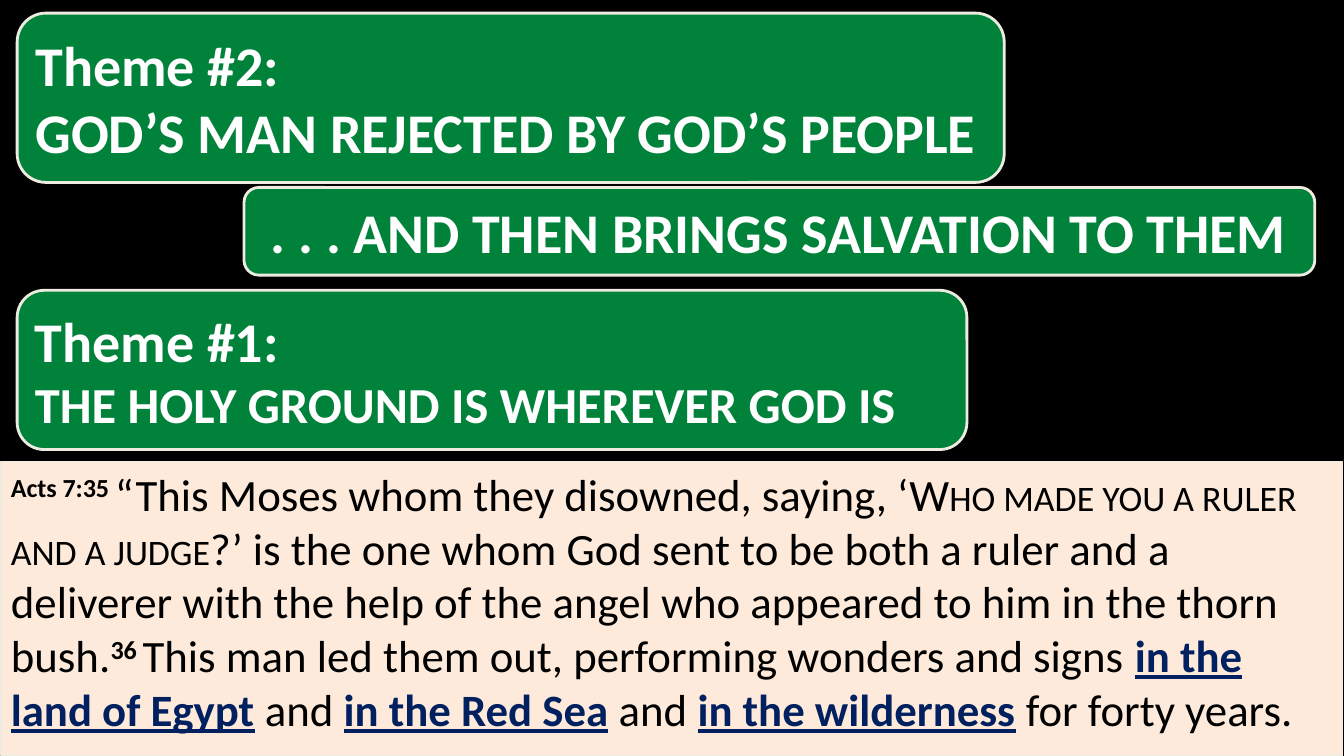
import pptx
import pptx.util
import pptx.dml.color
import pptx.enum.shapes
import pptx.enum.text

RGBColor = pptx.dml.color.RGBColor
BLACK = RGBColor(0x00, 0x00, 0x00)
WHITE = RGBColor(0xFF, 0xFF, 0xFF)
GREEN = RGBColor(0x00, 0x82, 0x3B)
PEACH = RGBColor(0xFD, 0xEA, 0xDA)
CREAM = RGBColor(0xEE, 0xEC, 0xE1)
NAVY = RGBColor(0x00, 0x20, 0x60)
SHAPES = pptx.enum.shapes.MSO_SHAPE
ANCHORS = pptx.enum.text.MSO_ANCHOR

presentation = pptx.Presentation()
presentation.slide_width = pptx.util.Inches(13.33)
presentation.slide_height = pptx.util.Inches(7.5)
slide = presentation.slides.add_slide(presentation.slide_layouts[6])
slide.background.fill.solid()
slide.background.fill.fore_color.rgb = BLACK


def add_panel(kind, box, fill, line_width, anchor):
    shape = slide.shapes.add_shape(kind, *(pptx.util.Inches(length) for length in box))
    shape.shadow.inherit = False
    shape.fill.solid()
    shape.fill.fore_color.rgb = fill
    shape.line.color.rgb = CREAM
    shape.line.width = pptx.util.Pt(line_width)
    shape.text_frame.word_wrap = True
    shape.text_frame.vertical_anchor = anchor
    return shape


def add_run(paragraph, text, size, color, bold):
    paragraph.alignment = pptx.enum.text.PP_ALIGN.LEFT
    run = paragraph.add_run()
    run.text = text
    run.font.name = "Calibri"
    run.font.size = pptx.util.Pt(size)
    run.font.color.rgb = color
    run.font.bold = bold
    return run


# Scripture passage: each run has a style of its own
passage = [
    ("Acts 7:35 ", "verse"),
    ("“This Moses whom they disowned, saying, ‘", "plain"),
    ("Who made you a ruler and a judge", "small caps"),
    ("?’ is the one whom God sent to be both a ruler and a deliverer with the help "
     "of the angel who appeared to him in the thorn bush.", "plain"),
    ("36 ", "verse"),
    ("This man led them out, performing wonders and signs ", "plain"),
    ("in the land of Egypt", "place"),
    (" and ", "plain"),
    ("in the Red Sea", "place"),
    (" and ", "plain"),
    ("in the wilderness", "place"),
    (" for forty years. ", "plain"),
]
scripture = add_panel(SHAPES.RECTANGLE, (0.01, 4.58, 13.31, 2.92), PEACH, 0.75, ANCHORS.TOP)
paragraph = scripture.text_frame.paragraphs[0]
for text, style in passage:
    color = NAVY if style == "place" else BLACK
    run = add_run(paragraph, text, 32, color, style in ("verse", "place"))
    if style == "place":
        run.font.underline = True
    elif style == "verse":
        run.font._element.set("baseline", "30000")
    elif style == "small caps":
        run.font._element.set("cap", "small")

# Theme callouts: box, then lines of text with their sizes
callouts = [
    ((0.17, 0.13, 9.79, 1.68),
     [("Theme #2:", 40), ("GOD’S MAN REJECTED BY GOD’S PEOPLE", 40)]),
    ((2.42, 1.86, 10.62, 0.87),
     [(" . . . AND THEN BRINGS SALVATION TO THEM", 40)]),
    ((0.17, 2.88, 9.42, 1.58),
     [("Theme #1:", 40), ("THE HOLY GROUND IS WHEREVER GOD IS", 36)]),
]
for box, lines in callouts:
    callout = add_panel(SHAPES.ROUNDED_RECTANGULAR_CALLOUT, box, GREEN, 2, ANCHORS.MIDDLE)
    for index, adjustment in enumerate((-0.22, 0.5, 0.17)):
        callout.adjustments[index] = adjustment
    frame = callout.text_frame
    for index, (text, size) in enumerate(lines):
        paragraph = frame.add_paragraph() if index else frame.paragraphs[0]
        add_run(paragraph, text, size, WHITE, True)

presentation.save("out.pptx")
